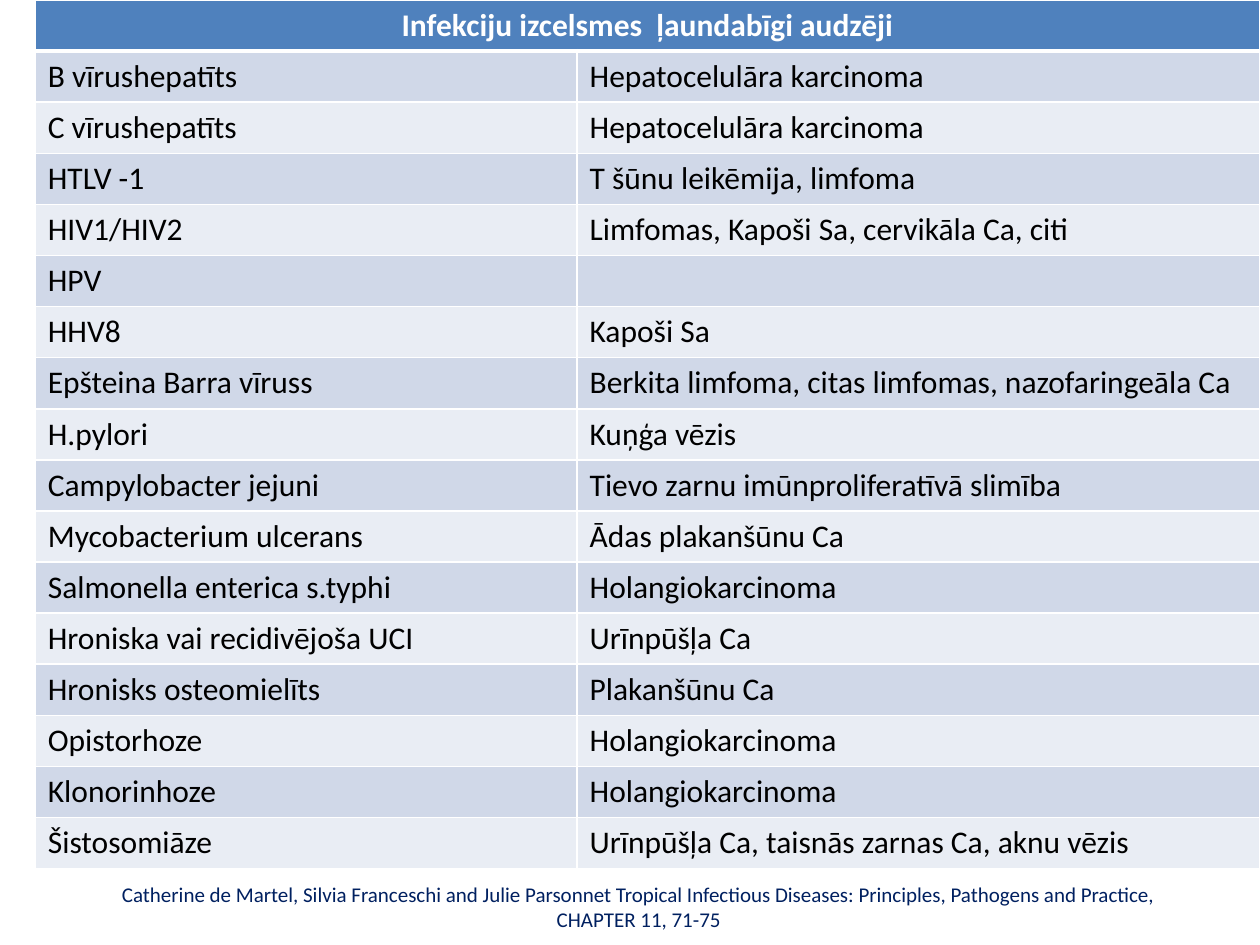
"""Build a slide with a table of cancers of infectious origin and its source."""
from dataclasses import dataclass

from lxml import etree
from pptx import Presentation
from pptx import util as u
from pptx.dml.color import RGBColor
from pptx.enum import text
from pptx.oxml import ns


@dataclass(frozen=True)
class Theme:
    font: str = "Calibri"
    header: str = "4F81BD"
    bands: tuple = ("E9EDF4", "D0D8E8")
    border: str = "FFFFFF"
    header_text: str = "FFFFFF"
    body_text: str = "000000"
    source_text: str = "002060"
    table_size: int = 18
    source_size: int = 12


def style_paragraph(paragraph, size, color, bold=False):
    paragraph.font.name = theme.font
    paragraph.font.size = u.Pt(size)
    paragraph.font.bold = bold
    paragraph.font.color.rgb = RGBColor.from_string(color)


def style_cell(cell, fill, bottom_width):
    properties = cell._tc.get_or_add_tcPr()
    for side, width in (("L", 1), ("R", 1), ("T", 1), ("B", bottom_width)):
        line = etree.SubElement(properties, ns.qn(f"a:ln{side}"), w=str(u.Pt(width)))
        solid = etree.SubElement(line, ns.qn("a:solidFill"))
        etree.SubElement(solid, ns.qn("a:srgbClr"), val=theme.border)
    cell.fill.solid()
    cell.fill.fore_color.rgb = RGBColor.from_string(fill)


theme = Theme()
heading = "Infekciju izcelsmes  ļaundabīgi audzēji"
source = (
    "Catherine de Martel, Silvia Franceschi and Julie Parsonnet Tropical Infectious "
    "Diseases: Principles, Pathogens and Practice, CHAPTER 11, 71-75"
)
cancers = [
    ("B vīrushepatīts", "Hepatocelulāra karcinoma"),
    ("C vīrushepatīts", "Hepatocelulāra karcinoma"),
    ("HTLV -1", "T šūnu leikēmija, limfoma"),
    ("HIV1/HIV2", "Limfomas, Kapoši Sa, cervikāla Ca, citi"),
    ("HPV", ""),
    ("HHV8", "Kapoši Sa"),
    ("Epšteina Barra vīruss", "Berkita limfoma, citas limfomas, nazofaringeāla Ca"),
    ("H.pylori", "Kuņģa vēzis"),
    ("Campylobacter jejuni", "Tievo zarnu imūnproliferatīvā slimība"),
    ("Mycobacterium ulcerans", "Ādas plakanšūnu Ca"),
    ("Salmonella enterica s.typhi", "Holangiokarcinoma"),
    ("Hroniska vai recidivējoša UCI", "Urīnpūšļa Ca"),
    ("Hronisks osteomielīts", "Plakanšūnu Ca"),
    ("Opistorhoze", "Holangiokarcinoma"),
    ("Klonorinhoze", "Holangiokarcinoma"),
    ("Šistosomiāze", "Urīnpūšļa Ca, taisnās zarnas Ca, aknu vēzis"),
]
rows = [(heading, "")] + cancers
columns = (u.Inches(4.3), u.Inches(5.42))
row_height = u.Inches(0.4)

deck = Presentation()
deck.slide_width, deck.slide_height = u.Inches(10), u.Inches(7.5)
page = deck.slides.add_slide(deck.slide_layouts[6])

table = page.shapes.add_table(
    len(rows), len(columns), deck.slide_width - sum(columns), 0,
    sum(columns), row_height * len(rows),
).table
for column, width in zip(table.columns, columns):
    column.width = width

for index, row in enumerate(rows):
    is_header = index == 0
    fill = theme.header if is_header else theme.bands[index % 2]
    color = theme.header_text if is_header else theme.body_text
    for cell, words in zip(table.rows[index].cells, row):
        cell.text = words
        style_cell(cell, fill, 3 if is_header else 1)
        style_paragraph(cell.text_frame.paragraphs[0], theme.table_size, color, is_header)

header = table.cell(0, 0)
header.merge(table.cell(0, 1))
header.text_frame.paragraphs[0].alignment = text.PP_ALIGN.CENTER

box = page.shapes.add_textbox(u.Inches(0.57), u.Inches(7.03), u.Inches(9), u.Inches(0.33))
box.text_frame.word_wrap = True
box.text_frame.vertical_anchor = text.MSO_ANCHOR.MIDDLE
para = box.text_frame.paragraphs[0]
para.text = source
para.alignment = text.PP_ALIGN.CENTER
style_paragraph(para, theme.source_size, theme.source_text)

deck.save("out.pptx")
